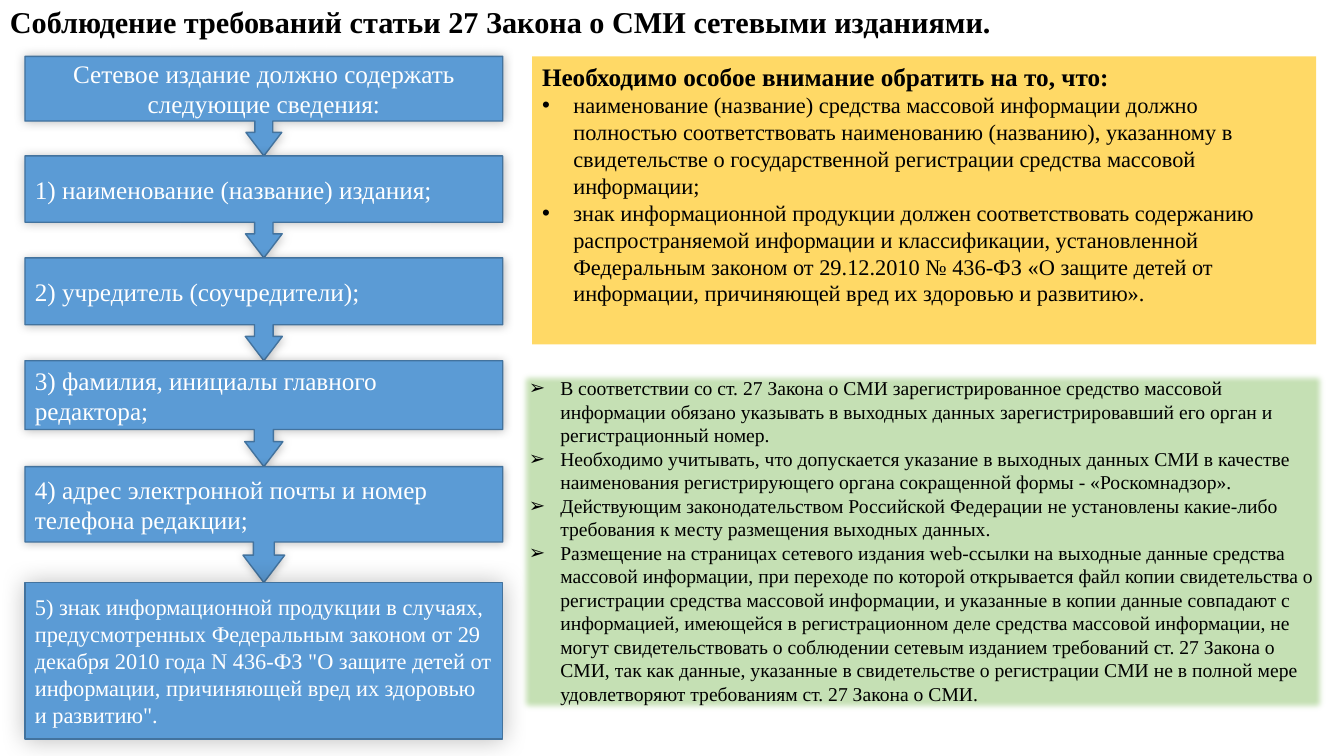
from dataclasses import dataclass

from lxml.etree import SubElement
from pptx import Presentation
from pptx.dml.color import RGBColor
from pptx.enum.shapes import MSO_SHAPE
from pptx.enum.text import MSO_ANCHOR, PP_ALIGN
from pptx.oxml.ns import qn
from pptx.shapes.autoshape import Shape
from pptx.slide import Slide
from pptx.text.text import _Paragraph
from pptx.util import Cm, Pt

FONT = "Times New Roman"
BLACK = "000000"
WHITE = "FFFFFF"
STEP_FILL = "5B9BD5"
STEP_LINE = "43739E"
STEP_LEFT, STEP_TOP, STEP_WIDTH = 0.63, 1.42, 12.04
CALLOUT_ADJUSTMENTS = (0.18, 0.18, 0.236, 0.65)


@dataclass(frozen=True)
class Step:
    text: str
    height: float
    size: int = 18
    preset: MSO_SHAPE = MSO_SHAPE.DOWN_ARROW_CALLOUT
    alignment: PP_ALIGN = PP_ALIGN.LEFT
    shadow_blur: float = 0.25


@dataclass(frozen=True)
class Panel:
    left: float
    top: float
    width: float
    height: float
    fill: str
    bullet: str
    size: int
    items: tuple[str, ...]
    heading: str = ""
    soft_edge: float = 0


STEPS = (
    Step("Сетевое издание должно содержать следующие сведения:", 2.51, alignment=PP_ALIGN.CENTER),
    Step("1) наименование (название) издания;", 2.57),
    Step("2) учредитель (соучредители);", 2.59),
    Step("3) фамилия, инициалы главного редактора;", 2.67),
    Step("4) адрес электронной почты и номер телефона редакции;", 2.92),
    Step(
        "5) знак информационной продукции в случаях, предусмотренных Федеральным законом "
        'от 29 декабря 2010 года N 436-ФЗ "О защите детей от информации, причиняющей вред '
        'их здоровью и развитию".',
        3.94, size=16, preset=MSO_SHAPE.RECTANGLE, shadow_blur=0.62,
    ),
)

PANELS = (
    Panel(
        13.41, 1.42, 19.76, 7.26, "FFD966", "•", 16,
        (
            "наименование (название) средства массовой информации должно полностью "
            "соответствовать наименованию (названию), указанному в свидетельстве о "
            "государственной регистрации средства массовой информации;",
            "знак информационной продукции должен соответствовать содержанию "
            "распространяемой информации и классификации, установленной Федеральным "
            "законом от 29.12.2010 № 436-ФЗ «О защите детей от информации, причиняющей "
            "вред их здоровью и развитию».",
        ),
        heading="Необходимо особое внимание обратить на то, что:",
    ),
    Panel(
        13.08, 9.35, 20.37, 8.64, "C5E0B4", "➢", 14,
        (
            "В соответствии со ст. 27 Закона о СМИ зарегистрированное средство массовой "
            "информации обязано указывать в выходных данных зарегистрировавший его орган "
            "и регистрационный номер.",
            "Необходимо учитывать, что допускается указание в выходных данных СМИ в "
            "качестве наименования регистрирующего органа сокращенной формы - «Роскомнадзор».",
            "Действующим законодательством Российской Федерации не установлены какие-либо "
            "требования к месту размещения выходных данных.",
            "Размещение на страницах сетевого издания web-ссылки на выходные данные "
            "средства массовой информации, при переходе по которой открывается файл копии "
            "свидетельства о регистрации средства массовой информации, и указанные в копии "
            "данные совпадают с информацией, имеющейся в регистрационном деле средства "
            "массовой информации, не могут свидетельствовать о соблюдении сетевым изданием "
            "требований ст. 27 Закона о СМИ, так как данные, указанные в свидетельстве о "
            "регистрации СМИ не в полной мере удовлетворяют требованиям ст. 27 Закона о СМИ.",
        ),
        soft_edge=0.18,
    ),
)


def color(value: str) -> RGBColor:
    return RGBColor.from_string(value)


def write(paragraph: _Paragraph, text: str, size: float, ink: str, bold: bool = False) -> None:
    paragraph.text = text
    paragraph.font.name = FONT
    paragraph.font.size = Pt(size)
    paragraph.font.bold = bold
    paragraph.font.color.rgb = color(ink)


def add_bullet(paragraph: _Paragraph, character: str) -> None:
    properties = paragraph._p.get_or_add_pPr()
    properties.set("marL", str(Cm(0.79)))
    properties.set("indent", str(-Cm(0.79)))
    SubElement(properties, qn("a:buFont"), typeface="Arial")
    SubElement(properties, qn("a:buChar"), char=character)


def add_shadow(shape: Shape, blur: float) -> None:
    effects = shape._element.spPr.find(qn("a:effectLst"))
    shadow = SubElement(effects, qn("a:outerShdw"), blurRad=str(Cm(blur)), dist="0",
                        algn="ctr", rotWithShape="0")
    tint = SubElement(shadow, qn("a:srgbClr"), val=BLACK)
    SubElement(tint, qn("a:alpha"), val="25000")


def add_soft_edge(shape: Shape, radius: float) -> None:
    effects = shape._element.spPr.find(qn("a:effectLst"))
    SubElement(effects, qn("a:softEdge"), rad=str(Cm(radius)))


def add_filled_shape(slide: Slide, preset: MSO_SHAPE, left: float, top: float,
                     width: float, height: float, fill: str) -> Shape:
    shape = slide.shapes.add_shape(preset, Cm(left), Cm(top), Cm(width), Cm(height))
    shape.shadow.inherit = False
    shape.fill.solid()
    shape.fill.fore_color.rgb = color(fill)
    shape.text_frame.word_wrap = True
    return shape


def draw_title(slide: Slide, text: str) -> None:
    title = slide.shapes.add_textbox(Cm(0), Cm(0), Cm(33.87), Cm(1.06))
    title.text_frame.word_wrap = True
    title.text_frame.vertical_anchor = MSO_ANCHOR.MIDDLE
    write(title.text_frame.paragraphs[0], text, 21.6, BLACK, bold=True)


def draw_step(slide: Slide, step: Step, top: float) -> None:
    shape = add_filled_shape(slide, step.preset, STEP_LEFT, top, STEP_WIDTH, step.height, STEP_FILL)
    if step.preset == MSO_SHAPE.DOWN_ARROW_CALLOUT:
        for index, value in enumerate(CALLOUT_ADJUSTMENTS):
            shape.adjustments[index] = value
    shape.line.color.rgb = color(STEP_LINE)
    shape.line.width = Pt(1)
    add_shadow(shape, step.shadow_blur)
    shape.text_frame.vertical_anchor = MSO_ANCHOR.MIDDLE
    paragraph = shape.text_frame.paragraphs[0]
    paragraph.alignment = step.alignment
    write(paragraph, step.text, step.size, WHITE)


def draw_panel(slide: Slide, panel: Panel) -> None:
    shape = add_filled_shape(slide, MSO_SHAPE.RECTANGLE, panel.left, panel.top,
                             panel.width, panel.height, panel.fill)
    shape.line.fill.background()
    if panel.soft_edge:
        add_soft_edge(shape, panel.soft_edge)
    frame = shape.text_frame
    frame.vertical_anchor = MSO_ANCHOR.TOP
    paragraph = frame.paragraphs[0]
    if panel.heading:
        paragraph.alignment = PP_ALIGN.LEFT
        write(paragraph, panel.heading, 18, BLACK, bold=True)
    for index, item in enumerate(panel.items):
        if index or panel.heading:
            paragraph = frame.add_paragraph()
        paragraph.alignment = PP_ALIGN.LEFT
        add_bullet(paragraph, panel.bullet)
        write(paragraph, item, panel.size, BLACK)


def main() -> None:
    presentation = Presentation()
    presentation.slide_width = Cm(33.87)
    presentation.slide_height = Cm(19.05)
    slide = presentation.slides.add_slide(presentation.slide_layouts[6])
    draw_title(slide, "Соблюдение требований статьи 27 Закона о СМИ сетевыми изданиями.")
    top = STEP_TOP
    for step in STEPS:
        draw_step(slide, step, top)
        top += step.height
    for panel in PANELS:
        draw_panel(slide, panel)
    presentation.save("out.pptx")


if __name__ == "__main__":
    main()
